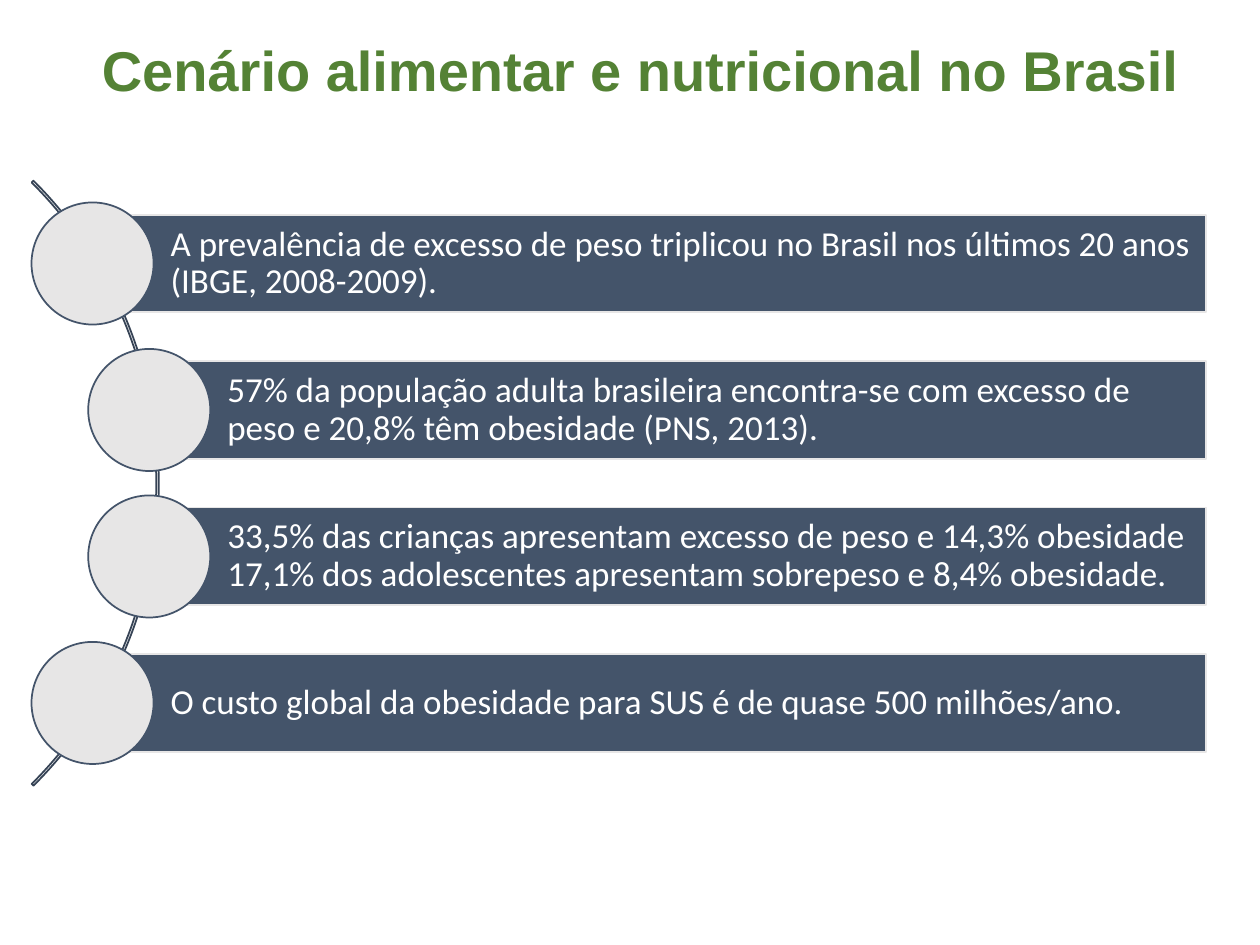
from pptx import Presentation
from pptx.dml.color import RGBColor
from pptx.enum.shapes import MSO_SHAPE
from pptx.enum.text import MSO_ANCHOR, MSO_AUTO_SIZE
from pptx.util import Inches, Pt

COLORS = {"title": "548235", "arc": "364355", "bar": "44546A",
          "light": "E7E6E6", "white": "FFFFFF"}
FACTS = [
    "A prevalência de excesso de peso triplicou no Brasil nos últimos 20 anos "
    "(IBGE, 2008-2009).",
    "57% da população adulta brasileira encontra-se com excesso de peso e "
    "20,8% têm obesidade (PNS, 2013).",
    "33,5% das crianças apresentam excesso de peso e 14,3% obesidade "
    "17,1% dos adolescentes apresentam sobrepeso e 8,4% obesidade.",
    "O custo global da obesidade para SUS é de quase 500 milhões/ano.",
]
INDENTS = [0, 0.45, 0.45, 0]
ARC_SIZE, ARC_RIGHT, ARC_THICKNESS = 6.79, 1.26, 0.02


def rgb(name):
    return RGBColor.from_string(COLORS[name])


def add_run(p, text, font, size, color, bold=False):
    r = p.add_run()
    r.text = text
    r.font.name, r.font.size, r.font.bold = font, Pt(size), bold
    r.font.color.rgb = rgb(color)


def add_shape(s, kind, box, fill, line):
    """Add a flat outlined shape; no fill when fill is None."""
    sp = s.shapes.add_shape(kind, *map(Inches, box))
    sp.shadow.inherit = False
    if fill:
        sp.fill.solid()
        sp.fill.fore_color.rgb = rgb(fill)
    else:
        sp.fill.background()
    sp.line.color.rgb = rgb(line)
    sp.line.width = Pt(1)
    return sp


def add_title(s, box):
    tf = s.shapes.add_textbox(*map(Inches, box)).text_frame
    tf.word_wrap = True
    tf.auto_size = MSO_AUTO_SIZE.SHAPE_TO_FIT_TEXT
    tf.margin_top = tf.margin_bottom = Inches(0.04)
    add_run(tf.paragraphs[0], "Cenário alimentar e nutricional no Brasil",
            "Arial", 32, "title", bold=True)


def add_arc(s, middle):
    """Add the thin arc on which the circles sit, centred on a height."""
    arc = add_shape(s, MSO_SHAPE.BLOCK_ARC,
                    (ARC_RIGHT - ARC_SIZE, middle - ARC_SIZE / 2, ARC_SIZE, ARC_SIZE),
                    None, "arc")
    # start angle, end angle, thickness as a share of the diameter
    for i, value in enumerate((189, 27, ARC_THICKNESS / ARC_SIZE)):
        arc.adjustments[i] = value


def add_fact(s, box, text):
    """Add a bar with its text, and a circle over the bar's left end."""
    x, y, w, h = box
    circle, bar_h = h * 5 / 6, h * 2 / 3
    bar = add_shape(s, MSO_SHAPE.RECTANGLE,
                    (x + circle / 2, y + (h - bar_h) / 2, w - circle / 2, bar_h),
                    "bar", "light")
    tf = bar.text_frame
    tf.word_wrap = True
    tf.vertical_anchor = MSO_ANCHOR.MIDDLE
    tf.margin_left = Inches(0.62)
    tf.margin_top = tf.margin_right = tf.margin_bottom = Inches(0.06)
    p = tf.paragraphs[0]
    p.alignment = 1
    p.line_spacing = 0.9
    add_run(p, text, "Calibri", 20, "white")
    add_shape(s, MSO_SHAPE.OVAL, (x, y + (h - circle) / 2, circle, circle),
              "light", "bar")


def add_fact_list(s, box):
    x, y, w, h = box
    row = h / len(FACTS)
    add_arc(s, y + h / 2)
    for i, (text, indent) in enumerate(zip(FACTS, INDENTS)):
        add_fact(s, (x + indent, y + i * row, w - indent, row), text)


def main():
    prs = Presentation()
    prs.slide_width, prs.slide_height = Inches(10), Inches(7.5)
    s = prs.slides.add_slide(prs.slide_layouts[6])
    add_title(s, (0.71, 0.24, 8.93, 0.63))
    add_fact_list(s, (0.25, 1.51, 9.32, 4.65))
    prs.save("out.pptx")


if __name__ == "__main__":
    main()
